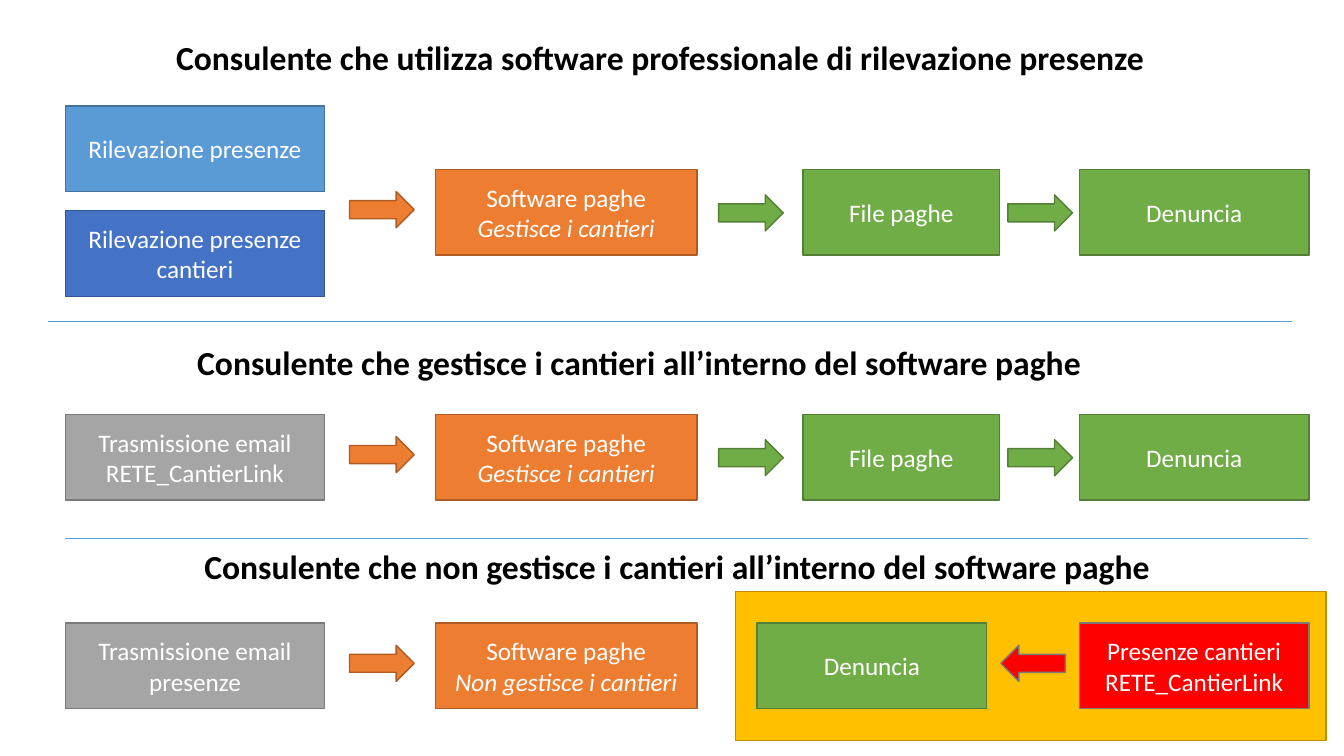
from pptx import Presentation
from pptx.dml.color import RGBColor
from pptx.enum.shapes import MSO_CONNECTOR, MSO_SHAPE
from pptx.enum.text import MSO_ANCHOR, MSO_AUTO_SIZE, PP_ALIGN
from pptx.util import Cm, Pt
from lxml.etree import SubElement

FONT = "Calibri"
BLUE, INDIGO = ("5B9BD5", "43739E"), ("4472C4", "325491")
ORANGE, GREEN = ("ED7D31", "AF5C24"), ("70AD47", "538035")
GREY, RED, GOLD = ("A5A5A5", "7A7A7A"), ("FF0000", "7A7A7A"), ("FFC000", "BD8E00")

# Columns, rows and box sizes in cm
SOURCE_X, PAYROLL_X, FILE_X, REPORT_X = 1.65, 10.97, 20.24, 27.2
SOURCE_W, PAYROLL_W, FILE_W, REPORT_W = 6.53, 6.6, 4.95, 5.79
BOX_H, ARROW_W, ARROW_H = 2.16, 1.63, 0.91
ROWS = [4.27, 10.44, 15.7]


def color(value):
    return RGBColor.from_string(value)


def add_block(left, top, width, height, colors, lines=(), kind=MSO_SHAPE.RECTANGLE):
    """Add a filled shape; each line is a (text, italic) pair."""
    shape = slide.shapes.add_shape(kind, Cm(left), Cm(top), Cm(width), Cm(height))
    shape.shadow.inherit = False
    shape.fill.solid()
    shape.fill.fore_color.rgb = color(colors[0])
    shape.line.color.rgb = color(colors[1])
    shape.line.width = Pt(1)
    frame = shape.text_frame
    frame.word_wrap = True
    frame.vertical_anchor = MSO_ANCHOR.MIDDLE
    for index, (text, italic) in enumerate(lines):
        paragraph = frame.add_paragraph() if index else frame.paragraphs[0]
        paragraph.alignment = PP_ALIGN.CENTER
        run = paragraph.add_run()
        run.text = text
        run.font.name, run.font.size = FONT, Pt(18)
        run.font.italic = italic
        run.font.color.rgb = color("FFFFFF")
    return shape


presentation = Presentation()
presentation.slide_width, presentation.slide_height = Cm(33.87), Cm(19.05)
slide = presentation.slides.add_slide(presentation.slide_layouts[6])

# Highlighted area of the third flow
add_block(18.54, 14.91, 14.88, 3.75, GOLD)

# Attendance sources
for top, colors, text in [
    (2.67, BLUE, "Rilevazione presenze"),
    (5.31, INDIGO, "Rilevazione presenze cantieri"),
    (ROWS[1], GREY, "Trasmissione email RETE_CantierLink"),
    (ROWS[2], GREY, "Trasmissione email presenze"),
]:
    add_block(SOURCE_X, top, SOURCE_W, BOX_H, colors, [(text, False)])

# Payroll software in every flow
for top, note in zip(ROWS, ["Gestisce i cantieri", "Gestisce i cantieri", "Non gestisce i cantieri"]):
    add_block(8.81, top + 0.56, ARROW_W, ARROW_H, ORANGE, kind=MSO_SHAPE.RIGHT_ARROW)
    add_block(PAYROLL_X, top, PAYROLL_W, BOX_H, ORANGE,
              [("Software paghe", False), (note, True)])

# Payroll file and report in the first two flows
for top in ROWS[:2]:
    for left in (18.11, 25.4):
        add_block(left, top + 0.64, ARROW_W, ARROW_H, GREEN, kind=MSO_SHAPE.RIGHT_ARROW)
    add_block(FILE_X, top, FILE_W, BOX_H, GREEN, [("File paghe", False)])
    add_block(REPORT_X, top, REPORT_W, BOX_H, GREEN, [("Denuncia", False)])

# Report fed by site attendance in the third flow
add_block(19.08, ROWS[2], REPORT_W, BOX_H, GREEN, [("Denuncia", False)])
add_block(REPORT_X, ROWS[2], REPORT_W, BOX_H, RED,
          [("Presenze cantieri", False), ("RETE_CantierLink", False)])
back_arrow = add_block(25.22, ROWS[2] + 0.56, ARROW_W, ARROW_H, RED, kind=MSO_SHAPE.RIGHT_ARROW)
back_arrow.rotation = 180

# Dividers
for start, end, top in [(1.22, 32.56, 8.1), (1.65, 32.97, 13.56)]:
    divider = slide.shapes.add_connector(
        MSO_CONNECTOR.STRAIGHT, Cm(start), Cm(top), Cm(end), Cm(top))
    divider.line.color.rgb = color(BLUE[0])
    divider.line.width = Pt(0.5)
    SubElement(divider._element.spPr,
               "{http://schemas.openxmlformats.org/drawingml/2006/main}effectLst")

# Headings
for left, top, width, text in [
    (4.19, 0.81, 25.37, "Consulente che utilizza software professionale di rilevazione presenze"),
    (4.72, 8.48, 22.91, "Consulente che gestisce i cantieri all’interno del software paghe"),
    (4.9, 13.64, 24.43, "Consulente che non gestisce i cantieri all’interno del software paghe"),
]:
    heading = slide.shapes.add_textbox(Cm(left), Cm(top), Cm(width), Cm(1.27))
    frame = heading.text_frame
    frame.word_wrap = False
    frame.auto_size = MSO_AUTO_SIZE.SHAPE_TO_FIT_TEXT
    run = frame.paragraphs[0].add_run()
    run.text = text
    run.font.name, run.font.size, run.font.bold = FONT, Pt(24), True
    run.font.color.rgb = color("000000")

presentation.save("out.pptx")
